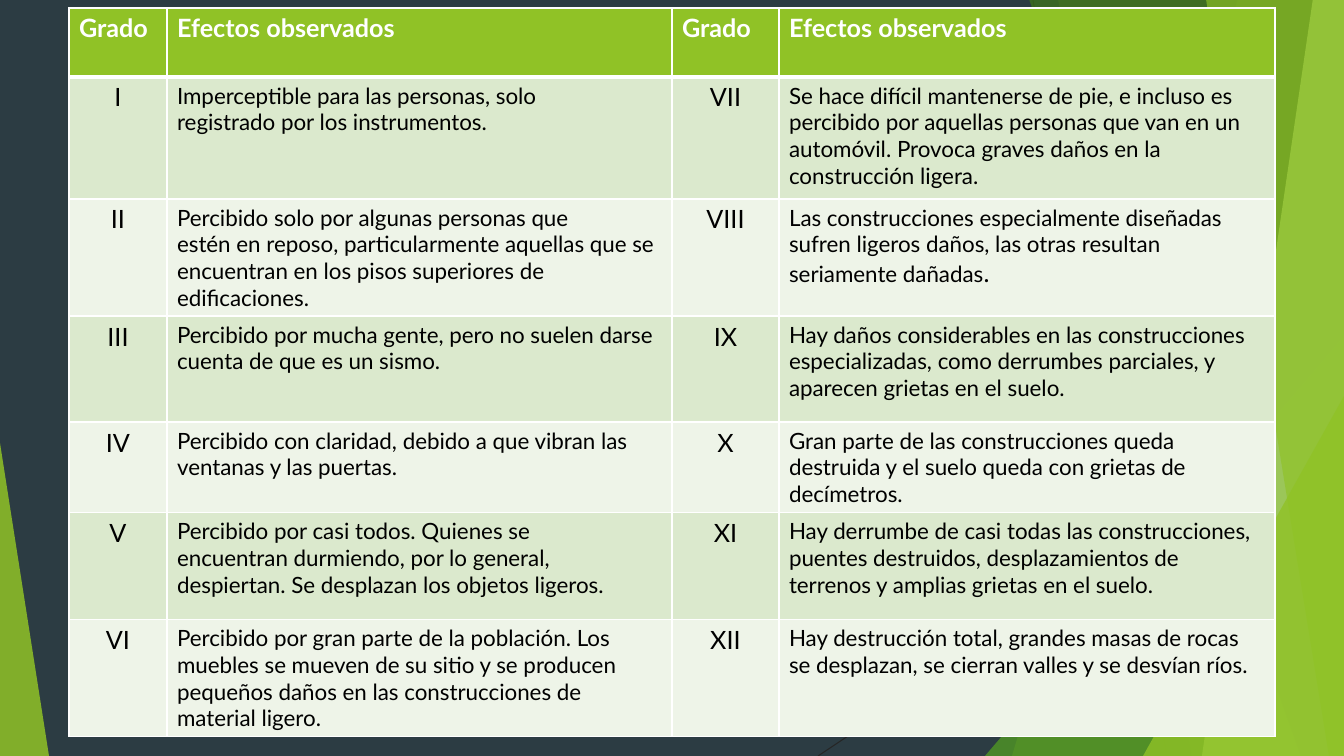
"""Build a slide with the twelve degrees of the seismic intensity scale."""
from lxml import etree
from pptx import Presentation
from pptx.dml.color import RGBColor
from pptx.enum.shapes import MSO_CONNECTOR, MSO_SHAPE
from pptx.enum.text import PP_ALIGN
from pptx.oxml.ns import qn
from pptx.util import Pt

TRIANGLE = MSO_SHAPE.ISOSCELES_TRIANGLE
STRAIGHT = MSO_CONNECTOR.STRAIGHT
CENTER, LEFT = PP_ALIGN.CENTER, PP_ALIGN.LEFT

FONT = "Lato"
DARK, GREEN, WHITE, BLACK, GRAY = "2C3C43", "90C226", "FFFFFF", "000000", "262626"
BANDS = ("DBE9CD", "EEF4E8")
SLIDE_W, SLIDE_H = 1344, 756
PX = 914400 / 100.8

HEADINGS = ("Grado", "Efectos observados")
EFFECTS = {
    "I": "Imperceptible para las personas, solo\nregistrado por los instrumentos.",
    "II": "Percibido solo por algunas personas que\nestén en reposo, particularmente aquellas "
          "que se encuentran en los pisos superiores de edificaciones.",
    "III": "Percibido por mucha gente, pero no suelen darse cuenta de que es un sismo.",
    "IV": "Percibido con claridad, debido a que vibran las ventanas y las puertas.",
    "V": "Percibido por casi todos. Quienes se\nencuentran durmiendo, por lo general, "
         "despiertan. Se desplazan los objetos ligeros.",
    "VI": "Percibido por gran parte de la población. Los muebles se mueven de su sitio y se "
          "producen pequeños daños en las construcciones de material ligero.",
    "VII": "Se hace difícil mantenerse de pie, e incluso es percibido por aquellas personas "
           "que van en un automóvil. Provoca graves daños en la construcción ligera.",
    "VIII": "Las construcciones especialmente diseñadas sufren ligeros daños, las otras "
            "resultan seriamente dañadas",
    "IX": "Hay daños considerables en las construcciones especializadas, como derrumbes "
          "parciales, y aparecen grietas en el suelo.",
    "X": "Gran parte de las construcciones queda destruida y el suelo queda con grietas de "
         "decímetros.",
    "XI": "Hay derrumbe de casi todas las construcciones, puentes destruidos, desplazamientos "
          "de terrenos y amplias grietas en el suelo.",
    "XII": "Hay destrucción total, grandes masas de rocas se desplazan, se cierran valles y "
           "se desvían ríos.",
}
LARGE_STOPS = {"VIII": "."}
TABLE_LEFT, TABLE_TOP = 69, 8
COLUMN_WIDTHS = (98, 505, 107, 496)
ROW_HEIGHTS = (69, 122, 107, 106, 82, 107, 107)

RAYS = [((1033, 0), (1167, SLIDE_H)), ((SLIDE_W, 406), (818, SLIDE_H))]
# top-left x, bottom-left x, colour, opacity
FACETS = [
    ("blade", 1238, 1012, GREEN, 30),
    ("blade", 1058, 1192, GREEN, 20),
    ("corner", 985, 336, 359, 1, "54A021", 72),
    ("blade", 1029, 1301, "3F7819", 70),
    ("blade", 1313, 1202, "C0E474", 70),
    ("blade", 1206, 1329, GREEN, 65),
    ("corner", 1143, 396, 201, 1, GREEN, 80),
    ("corner", 0, 443, 49, 0, GREEN, 85),
]


def px(length):
    return round(length * PX)


def rgb(color):
    return RGBColor.from_string(color)


def add_ray(shapes, start, end):
    ray = shapes.add_connector(STRAIGHT, *map(px, start + end))
    ray.line.color.rgb = rgb(GRAY)
    ray.line.width = Pt(0.75)
    etree.SubElement(ray._element.spPr, qn("a:effectLst"))


def add_blade(shapes, top_x, bottom_x):
    outline = shapes.build_freeform(top_x, -1, scale=PX)
    outline.add_line_segments([(SLIDE_W, -1), (SLIDE_W, SLIDE_H), (bottom_x, SLIDE_H)])
    return outline.convert_to_shape()


def add_corner(shapes, left, top, width, apex):
    corner = shapes.add_shape(TRIANGLE, px(left), px(top), px(width), px(SLIDE_H - top))
    corner.adjustments[0] = apex
    return corner


def paint_facet(facet, color, opacity):
    facet.shadow.inherit = False
    facet.fill.solid()
    facet.fill.fore_color.rgb = rgb(color)
    tint = facet._element.spPr.find(".//" + qn("a:srgbClr"))
    etree.SubElement(tint, qn("a:alpha"), val=str(opacity * 1000))
    facet.line.fill.background()


def set_borders(cell, top, bottom):
    properties = cell._tc.get_or_add_tcPr()
    for position, (side, width) in enumerate(zip("LRTB", (1, 1, top, bottom))):
        border = etree.Element(qn(f"a:ln{side}"), w=str(Pt(width)))
        paint = etree.SubElement(border, qn("a:solidFill"))
        etree.SubElement(paint, qn("a:srgbClr"), val=WHITE)
        properties.insert(position, border)


def fill_cell(cell, wording, row, is_grade):
    header = row == 0
    cell.fill.solid()
    cell.fill.fore_color.rgb = rgb(GREEN if header else BANDS[(row - 1) % 2])
    set_borders(cell, 3 if row == 1 else 1, 3 if header else 1)
    cell.text_frame.text = wording
    for paragraph in cell.text_frame.paragraphs:
        paragraph.alignment = CENTER if is_grade and not header else LEFT
        paragraph.font.name = FONT
        paragraph.font.size = Pt(18 if header or is_grade else 16)
        paragraph.font.bold = header
        paragraph.font.color.rgb = rgb(WHITE if header else BLACK)


def add_scale(shapes):
    degrees = list(EFFECTS.items())
    half = len(degrees) // 2
    rows = [HEADINGS * 2] + [a + b for a, b in zip(degrees[:half], degrees[half:])]
    scale = shapes.add_table(len(rows), len(COLUMN_WIDTHS), px(TABLE_LEFT), px(TABLE_TOP),
                             px(sum(COLUMN_WIDTHS)), px(sum(ROW_HEIGHTS))).table
    scale.horz_banding = False
    for column, width in zip(scale.columns, COLUMN_WIDTHS):
        column.width = px(width)
    for r, (wordings, height) in enumerate(zip(rows, ROW_HEIGHTS)):
        scale.rows[r].height = px(height)
        for c, wording in enumerate(wordings):
            fill_cell(scale.cell(r, c), wording, r, c % 2 == 0)
            if c % 2 and wordings[c - 1] in LARGE_STOPS:
                stop = scale.cell(r, c).text_frame.paragraphs[-1].add_run()
                stop.text = LARGE_STOPS[wordings[c - 1]]
                stop.font.size = Pt(18)


def main():
    deck = Presentation()
    deck.slide_width, deck.slide_height = px(SLIDE_W), px(SLIDE_H)
    slide = deck.slides.add_slide(deck.slide_layouts[6])
    slide.background.fill.solid()
    slide.background.fill.fore_color.rgb = rgb(DARK)
    for start, end in RAYS:
        add_ray(slide.shapes, start, end)
    builders = {"blade": add_blade, "corner": add_corner}
    for kind, *geometry, color, opacity in FACETS:
        paint_facet(builders[kind](slide.shapes, *geometry), color, opacity)
    add_scale(slide.shapes)
    deck.save("out.pptx")


if __name__ == "__main__":
    main()
